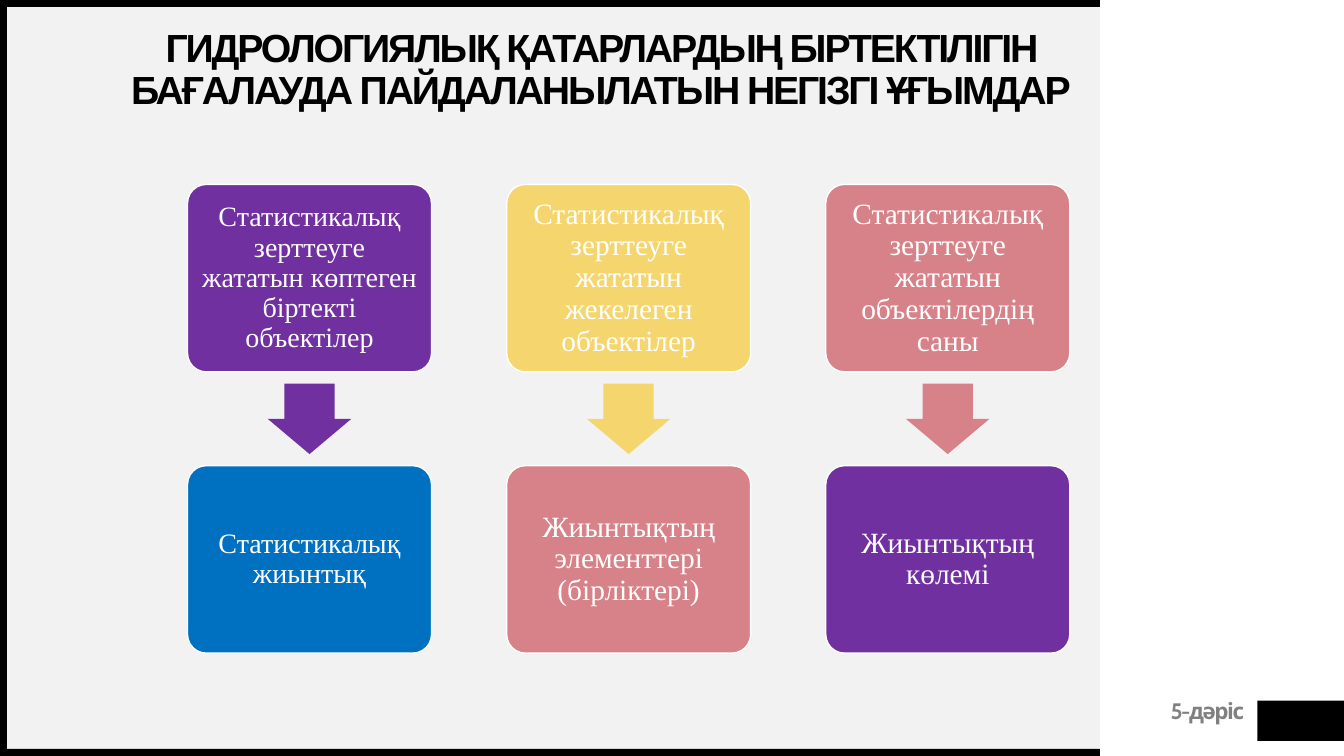
from pptx import Presentation
from pptx import util as u
from pptx.dml.color import RGBColor
from pptx.enum import shapes, text

SLIDE_W, SLIDE_H = 13.33, 7.5
COLORS = {
    "panel": "F2F2F2", "black": "000000", "white": "FFFFFF", "grey": "808080",
    "purple": "7030A0", "blue": "0070C0", "yellow": "F5D66E", "rose": "D78189",
}
TITLE = ("ГИДРОЛОГИЯЛЫҚ ҚАТАРЛАРДЫҢ БІРТЕКТІЛІГІН "
         "БАҒАЛАУДА ПАЙДАЛАНЫЛАТЫН НЕГІЗГІ ҰҒЫМДАР")
# Definition, its colour, term, its colour, text size
CONCEPTS = [
    ("Статистикалық зерттеуге жататын көптеген біртекті объектілер", "purple",
     "Статистикалық жиынтық", "blue", 20),
    ("Статистикалық зерттеуге жататын жекелеген объектілер", "yellow",
     "Жиынтықтың элементтері (бірліктері)", "rose", 21),
    ("Статистикалық зерттеуге жататын объектілердің саны", "rose",
     "Жиынтықтың көлемі", "purple", 21),
]
RECT = shapes.MSO_SHAPE.RECTANGLE
CARD = shapes.MSO_SHAPE.ROUNDED_RECTANGLE
ARROW = shapes.MSO_SHAPE.DOWN_ARROW


def rgb(name):
    return RGBColor.from_string(COLORS[name])


def inches(box):
    return [u.Inches(v) for v in box]


def add_block(slide, kind, box, color, adjustments=()):
    sp = slide.shapes.add_shape(kind, *inches(box))
    sp.shadow.inherit = False
    sp.fill.solid()
    sp.fill.fore_color.rgb = rgb(color)
    sp.line.fill.background()
    for i, value in enumerate(adjustments):
        sp.adjustments[i] = value
    return sp


def write(sp, words, color, font, paragraph, inset=0, spacing=0):
    """Fill a shape with one paragraph; spacing is in points between letters."""
    tf = sp.text_frame
    frame = {"word_wrap": True, "auto_size": text.MSO_AUTO_SIZE.NONE,
             "vertical_anchor": text.MSO_ANCHOR.MIDDLE}
    for side in ("left", "top", "right", "bottom"):
        frame[f"margin_{side}"] = u.Inches(inset)
    p = tf.paragraphs[0]
    r = p.add_run()
    r.text = words
    for target, values in ((tf, frame), (p, paragraph), (r.font, font)):
        for name, value in values.items():
            setattr(target, name, value)
    r.font.color.rgb = rgb(color)
    if spacing:
        r._r.get_or_add_rPr().set("spc", str(int(spacing * 100)))


def add_frame(slide, box):
    """Grey panel with black bars on its left, top and bottom."""
    x, y, w, h = box
    bar = 0.07
    add_block(slide, RECT, box, "panel")
    for edge in ((x, y, w, bar), (x, y + h - bar, w, bar), (x, y, bar, h)):
        add_block(slide, RECT, edge, "black")


def add_footer(slide, box):
    x, y, w, h = box
    tag_w, gap = 0.86, 0.13
    add_block(slide, RECT, (x + w - tag_w, y, tag_w, h), "black")
    sp = slide.shapes.add_textbox(*inches((x, y, w - tag_w - gap, 0.24)))
    write(sp, "5-дәріс", "grey",
          {"name": "Cabin", "size": u.Pt(16), "bold": True},
          {"alignment": text.PP_ALIGN.RIGHT, "line_spacing": u.Pt(14)},
          spacing=-1)
    sp.text_frame.margin_top = u.Inches(0.04)
    sp.text_frame.vertical_anchor = text.MSO_ANCHOR.TOP


def add_title(slide, box):
    sp = slide.shapes.title
    sp.left, sp.top, sp.width, sp.height = inches(box)
    write(sp, TITLE, "black",
          {"name": "Arial", "size": u.Pt(28), "bold": True},
          {"alignment": text.PP_ALIGN.CENTER, "line_spacing": 0.9},
          spacing=-1.5)


def add_concept(slide, box, concept):
    """Definition card above, arrow between, term card below."""
    x, y, w, h = box
    definition, top_color, term, bottom_color, size = concept
    card_h = h * 0.4
    arrow_w, arrow_h = 0.83, 0.7
    cards = ((y, definition, top_color), (y + h - card_h, term, bottom_color))
    for top, words, color in cards:
        sp = add_block(slide, CARD, (x, top, w, card_h), color, [0.1])
        sp.line.color.rgb = rgb("white")
        sp.line.width = u.Pt(1)
        write(sp, words, "white",
              {"name": "Times New Roman", "size": u.Pt(size)},
              {"alignment": text.PP_ALIGN.CENTER, "line_spacing": 0.9},
              inset=size * 0.004)
    arrow = (x + (w - arrow_w) / 2, y + (h - arrow_h) / 2, arrow_w, arrow_h)
    add_block(slide, ARROW, arrow, top_color, [0.6, 0.5])


def add_concepts(slide, box):
    x, y, w, h = box
    card_w = 2.42
    step = (w - card_w) / (len(CONCEPTS) - 1)
    for i, concept in enumerate(CONCEPTS):
        add_concept(slide, (x + i * step, y, card_w, h), concept)


def main():
    prs = Presentation()
    prs.slide_width, prs.slide_height = inches((SLIDE_W, SLIDE_H))
    slide = prs.slides.add_slide(prs.slide_layouts[5])
    add_frame(slide, (0, 0, 10.91, SLIDE_H))
    add_footer(slide, (10.53, 6.95, SLIDE_W - 10.53, 0.4))
    add_concepts(slide, (1.86, 1.83, 8.75, 4.65))
    add_title(slide, (1.21, 0.24, 9.5, 0.92))
    # The title sits in front of the panel
    tree = slide.shapes.title.element.getparent()
    tree.append(slide.shapes.title.element)
    prs.save("out.pptx")


if __name__ == "__main__":
    main()
